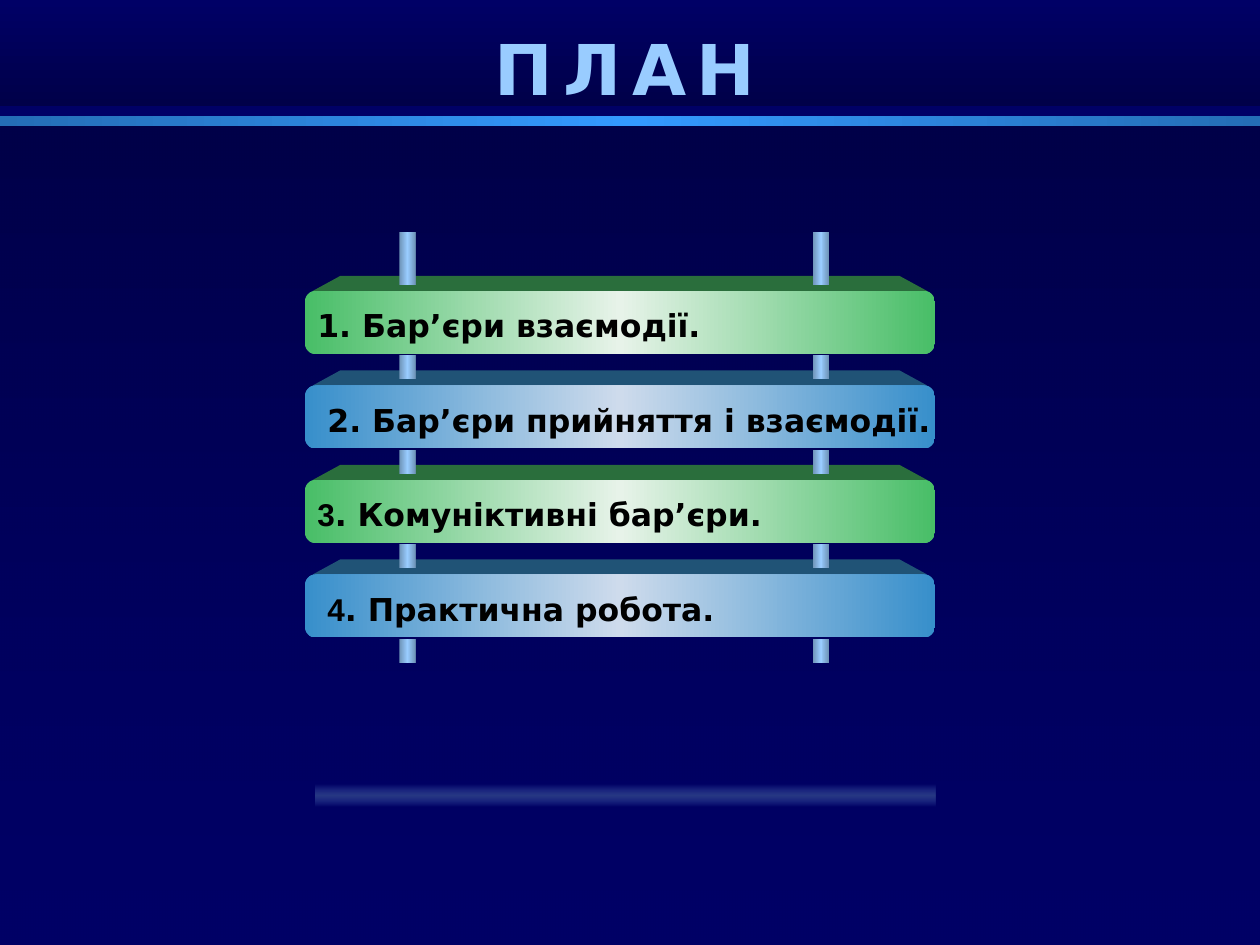
from typing import NamedTuple

from lxml import etree
from pptx import Presentation
from pptx import util as u
from pptx.dml.color import RGBColor
from pptx.enum import shapes, text
from pptx.oxml.ns import qn

FONT = "DejaVu Sans"


class Stop(NamedTuple):
    pos: int
    color: str
    alpha: int = 100


class Palette(NamedTuple):
    edge: str
    center: str
    lid: str


class Item(NamedTuple):
    number: str
    words: str
    number_font: str
    palette: Palette
    text_left: float
    text_width: float


GREEN = Palette("48BE67", "E7F3E9", "2A6E3C")
BLUE = Palette("378FCB", "CEDBEC", "205376")
ITEMS = [
    Item("1", ". Бар’єри взаємодії.", FONT, GREEN, 2.42, 3.87),
    Item("2", ". Бар’єри прийняття і взаємодії.", FONT, BLUE, 2.5, 6.02),
    Item("3", ". Комуніктивні бар’єри.", "Arial", GREEN, 2.42, 3.87),
    Item("4", ". Практична робота.", "Arial", BLUE, 2.5, 3.79),
]
BAR_LEFT, BAR_TOP, BAR_WIDTH, BAR_HEIGHT = 2.42, 2.31, 5, 0.5
PITCH = 0.75


def rgb(color: str) -> RGBColor:
    return RGBColor.from_string(color)


def set_gradient(sp, stops: list[Stop], angle: int) -> None:
    sp.fill.background()
    grad = etree.Element(qn("a:gradFill"), rotWithShape="1")
    gs_list = etree.SubElement(grad, qn("a:gsLst"))
    for stop in stops:
        gs = etree.SubElement(gs_list, qn("a:gs"), pos=str(stop.pos * 1000))
        clr = etree.SubElement(gs, qn("a:srgbClr"), val=stop.color)
        if stop.alpha < 100:
            etree.SubElement(clr, qn("a:alpha"), val=str(stop.alpha * 1000))
    etree.SubElement(grad, qn("a:lin"), ang=str(angle * 60000), scaled="0")
    spPr = sp.element.spPr
    spPr.replace(spPr.find(qn("a:noFill")), grad)


def mirrored(edge: str, center: str) -> list[Stop]:
    """Stops running from the edge colour to the centre colour and back."""
    return [Stop(0, edge), Stop(50, center), Stop(100, edge)]


def add_block(parent, left: float, top: float, width: float, height: float,
              stops: list[Stop], angle: int = 0,
              kind=shapes.MSO_SHAPE.RECTANGLE):
    sp = parent.add_shape(kind, u.Inches(left), u.Inches(top),
                          u.Inches(width), u.Inches(height))
    sp.shadow.inherit = False
    set_gradient(sp, stops, angle)
    sp.line.fill.background()
    return sp


def add_lid(s, top: float, color: str) -> None:
    """Draw the receding upper face of a bar whose front starts at top."""
    right = BAR_LEFT + BAR_WIDTH
    points = [(BAR_LEFT + 0.06, top), (BAR_LEFT + 0.28, top - 0.12),
              (right - 0.28, top - 0.12), (right - 0.06, top)]
    corners = [(u.Inches(x), u.Inches(y)) for x, y in points]
    builder = s.shapes.build_freeform(*corners[0])
    builder.add_line_segments(corners[1:], close=True)
    sp = builder.convert_to_shape()
    sp.shadow.inherit = False
    sp.fill.solid()
    sp.fill.fore_color.rgb = rgb(color)
    sp.line.fill.background()


def add_item(s, item: Item, top: float) -> None:
    palette = item.palette
    add_lid(s, top, palette.lid)
    bar = add_block(s.shapes, BAR_LEFT, top, BAR_WIDTH, BAR_HEIGHT,
                    mirrored(palette.edge, palette.center),
                    kind=shapes.MSO_SHAPE.ROUNDED_RECTANGLE)
    bar.adjustments[0] = 0.167
    box = s.shapes.add_textbox(u.Inches(item.text_left), u.Inches(top + 0.07),
                               u.Inches(item.text_width), u.Inches(0.4))
    tf = box.text_frame
    tf.word_wrap = True
    tf.auto_size = text.MSO_AUTO_SIZE.SHAPE_TO_FIT_TEXT
    p = tf.paragraphs[0]
    for words, font in ((item.number, item.number_font), (item.words, FONT)):
        r = p.add_run()
        r.text = words
        r.font.name, r.font.size, r.font.bold = font, u.Pt(18), True
        r.font.color.rgb = rgb("000000")


def add_rod(s, left: float) -> None:
    """Draw the visible pieces of a rod that links all the bars."""
    group = s.shapes.add_group_shape()
    gaps = [(BAR_TOP + BAR_HEIGHT + 0.01 + i * PITCH, 0.19)
            for i in range(len(ITEMS))]
    for top, height in [(1.84, 0.42), *gaps]:
        add_block(group.shapes, left, top, 0.13, height,
                  mirrored("6D92B6", "99CCFF"))


def add_header(s) -> None:
    add_block(s.shapes, 0, 0, 10, 0.84,
              [Stop(0, "000066"), Stop(100, "000049")], 90)
    add_block(s.shapes, 0, 0.99, 10, 6.51,
              [Stop(0, "000049"), Stop(100, "000066", 48)], 90)
    add_block(s.shapes, 0, 0.92, 10, 0.08, mirrored("246DB6", "3399FF"))


def set_title(s, words: str) -> None:
    title = s.shapes.title
    title.left, title.top = u.Inches(0.25), u.Inches(0.17)
    title.width, title.height = u.Inches(9.42), u.Inches(0.73)
    tf = title.text_frame
    tf.text = words
    tf.vertical_anchor = text.MSO_ANCHOR.MIDDLE
    p = tf.paragraphs[0]
    p.alignment = text.PP_ALIGN.CENTER
    r = p.runs[0]
    r.font.name, r.font.size, r.font.bold = FONT, u.Pt(40), True
    r.font.color.rgb = rgb("99CCFF")
    r.font._element.set("spc", "600")
    # Bring the title in front of the header bands.
    title.element.getparent().append(title.element)


def main() -> None:
    prs = Presentation()
    prs.slide_width, prs.slide_height = u.Inches(10), u.Inches(7.5)
    s = prs.slides.add_slide(prs.slide_layouts[5])
    s.background.fill.solid()
    s.background.fill.fore_color.rgb = rgb("000066")
    add_header(s)
    set_title(s, "ПЛАН")
    for i, item in enumerate(ITEMS):
        add_item(s, item, BAR_TOP + i * PITCH)
    for left in (3.17, 6.45):
        add_rod(s, left)
    add_block(s.shapes, 2.5, 6.23, 4.92, 0.17,
              [Stop(0, "5F87D7", 0), Stop(50, "44619A", 58),
               Stop(100, "5F87D7", 0)], 90)
    prs.save("out.pptx")


if __name__ == "__main__":
    main()
